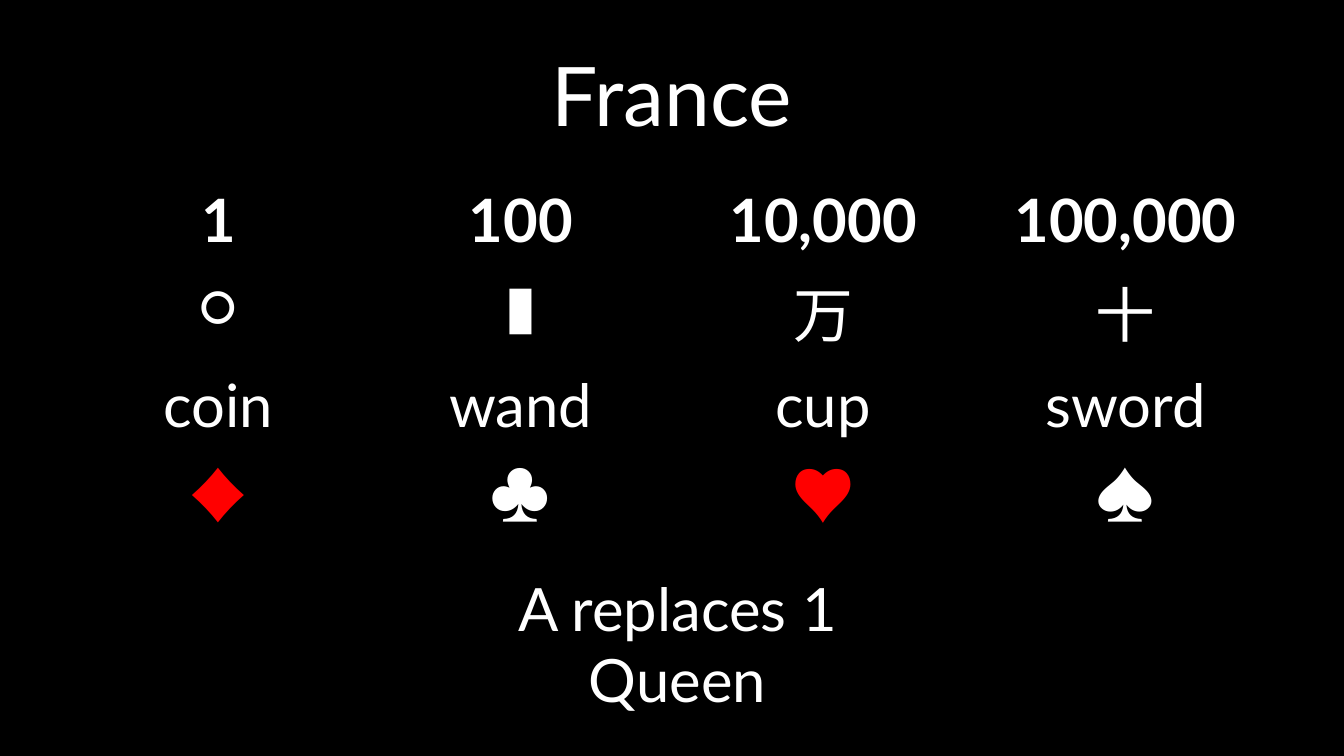
from dataclasses import dataclass

from pptx import Presentation
from pptx.dml.color import RGBColor
from pptx.enum import text
from pptx.oxml import ns
from pptx.util import Cm, Pt


@dataclass(frozen=True)
class Theme:
    font: str = "Lato"
    black: RGBColor = RGBColor(0, 0, 0)
    white: RGBColor = RGBColor(255, 255, 255)
    red: RGBColor = RGBColor(255, 0, 0)
    title_size: int = 44
    body_size: int = 32


THEME = Theme()
NO_STYLE_NO_GRID = "{2D5ABB26-0587-4C30-8999-92F81FD0307C}"
RED_SUITS = "♦♥"
SUIT_ROWS = [
    ["1", "100", "10,000", "100,000"],
    ["○", "▮", "万", "十"],
    ["coin", "wand", "cup", "sword"],
    ["♦", "♣", "♥", "♠"],
]


def set_values(target, values):
    for name, value in values.items():
        setattr(target, name, value)


def write(frame, words, size, color=THEME.white, bold=False):
    """Fill a text frame with one centred paragraph; \\v breaks the line."""
    para = frame.paragraphs[0]
    para.text = words
    para.alignment = text.PP_ALIGN.CENTER
    for span in para.runs:
        set_values(span.font, {"name": THEME.font, "size": Pt(size), "bold": bold})
        span.font.color.rgb = color


def add_title(page, words, left, top, width, height):
    title = page.shapes.title
    set_values(title, {"left": left, "top": top, "width": width, "height": height})
    title.text_frame.vertical_anchor = text.MSO_ANCHOR.MIDDLE
    write(title.text_frame, words, THEME.title_size)


def add_suit_table(page, rows, left, top, width, row_height):
    table = page.shapes.add_table(
        len(rows), len(rows[0]), left, top, width, row_height * len(rows)
    ).table
    set_values(table, {"first_row": False, "horz_banding": False})
    style = table._tbl.tblPr.find(ns.qn("a:tableStyleId"))
    style.text = NO_STYLE_NO_GRID
    for row_index, row in enumerate(rows):
        for column_index, words in enumerate(row):
            cell = table.cell(row_index, column_index)
            cell.fill.solid()
            cell.fill.fore_color.rgb = THEME.black
            color = THEME.red if words in RED_SUITS else THEME.white
            write(cell.text_frame, words, THEME.body_size, color, bold=row_index == 0)


def add_note(page, words, left, top, width, height):
    box = page.shapes.add_textbox(left, top, width, height)
    set_values(box.text_frame, {
        "word_wrap": True,
        "vertical_anchor": text.MSO_ANCHOR.BOTTOM,
    })
    write(box.text_frame, words, THEME.body_size)


def main():
    deck = Presentation()
    set_values(deck, {"slide_width": Cm(25.4), "slide_height": Cm(14.29)})
    page = deck.slides.add_slide(deck.slide_layouts[5])
    page.background.fill.solid()
    page.background.fill.fore_color.rgb = THEME.black

    # Heading
    add_title(page, "France", Cm(1.27), Cm(0.58), Cm(22.86), Cm(2.39))

    # Values, money signs, Latin suits and French suits
    add_suit_table(page, SUIT_ROWS, Cm(1.27), Cm(3.33), Cm(22.86), Cm(1.04))

    # Changes to the ranks
    add_note(page, "A replaces 1\vQueen", Cm(4.65), Cm(9.27), Cm(16.31), Cm(4.37))

    deck.save("out.pptx")


if __name__ == "__main__":
    main()
